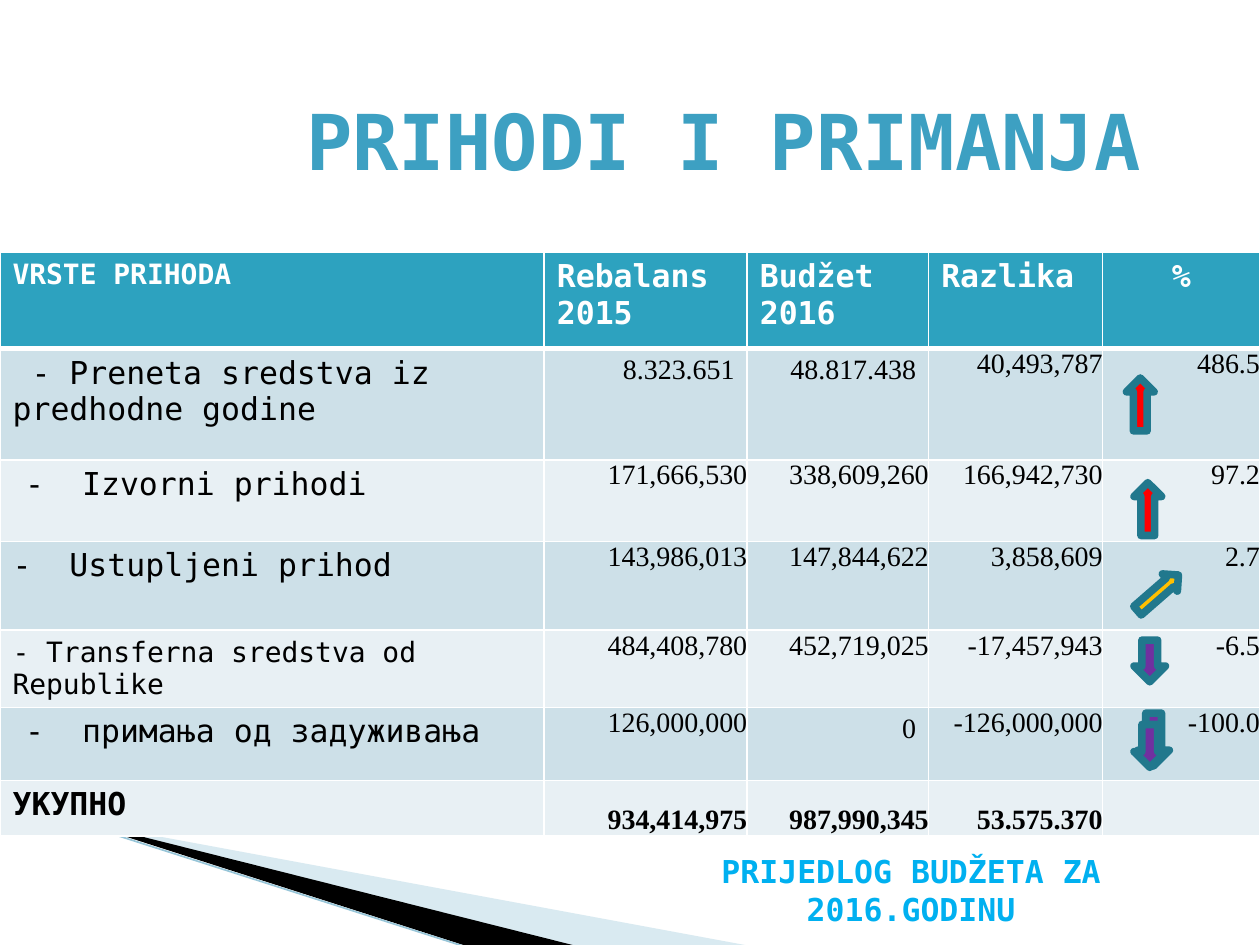
from dataclasses import dataclass

from lxml.etree import SubElement
from pptx import Presentation
from pptx.dml.color import RGBColor
from pptx.enum.shapes import MSO_CONNECTOR, MSO_SHAPE
from pptx.enum.text import MSO_ANCHOR as Anchor, MSO_AUTO_SIZE, PP_ALIGN as Align
from pptx.oxml.ns import qn
from pptx.util import Pt

MONO, SERIF = "DejaVu Sans Mono", "Times New Roman"
WHITE, BLACK, TEAL = "FFFFFF", "000000", "2DA2BF"
BANDS = ("CDE0E8", "E8F0F4")
RED, AMBER, PURPLE, ARROW_EDGE = "FF0000", "FFC000", "7030A0", "21788D"
CELL_INSET = (7.2, 3.6)
DASH_GAP = 32.5

COLUMN_WIDTHS = (311, 116, 103.7, 99.4, 89.9)
ROW_HEIGHTS = (55.2, 63.6, 46.6, 50.7, 42, 41.8, 31.7)
HEADERS = ("VRSTE PRIHODA", "Rebalans 2015", "Budžet 2016", "Razlika", "%")


@dataclass
class RevenueRow:
    label: str
    values: tuple
    left: float = 0
    indent: float = 0
    size: float = 18
    padded: tuple = ()
    total: bool = False


@dataclass
class Arrow:
    left: float
    top: float
    width: float
    height: float
    color: str
    rotation: float = 0


REVENUES = (
    RevenueRow("- Preneta sredstva iz predhodne godine",
               ("8.323.651", "48.817.438", "40,493,787", "486.5"),
               indent=10.8, padded=(1, 2)),
    RevenueRow("-\tIzvorni prihodi",
               ("171,666,530", "338,609,260", "166,942,730", "97.2"),
               left=7.2 + DASH_GAP, indent=-DASH_GAP),
    RevenueRow("-\tUstupljeni prihod",
               ("143,986,013", "147,844,622", "3,858,609", "2.7"),
               left=DASH_GAP, indent=-DASH_GAP),
    RevenueRow("- Transferna sredstva od Republike",
               ("484,408,780", "452,719,025", "-17,457,943", "-6.5"), size=16),
    RevenueRow("-\tпримања од задуживања",
               ("126,000,000", "0", "-126,000,000", "-100.0"),
               left=7.2 + DASH_GAP, indent=-DASH_GAP, padded=(2,)),
    RevenueRow("УКУПНО", ("934,414,975", "987,990,345", "53.575.370", ""), total=True),
)

ARROWS = (
    Arrow(643.7, 216, 15.8, 30.2, RED),
    Arrow(655.2, 323.3, 13, 31, AMBER, 49),
    Arrow(650.2, 407.5, 18, 30.2, PURPLE, 180),
    Arrow(648, 414, 18, 24.5, PURPLE, 180),
    Arrow(648, 365.8, 18, 23.8, PURPLE, 180),
    Arrow(648, 275.8, 15.8, 30.2, RED),
)


def rgb(color: str) -> RGBColor:
    return RGBColor.from_string(color)


def format_text(paragraph, font: str, size: float, color: str, bold: bool = False,
                align=Align.LEFT) -> None:
    paragraph.alignment = align
    for run in paragraph.runs:
        run.font.name = font
        run.font.size = Pt(size)
        run.font.bold = bold
        run.font.color.rgb = rgb(color)


def set_indent(paragraph, left: float, first_line: float) -> None:
    properties = paragraph._p.get_or_add_pPr()
    properties.set("marL", str(Pt(left)))
    properties.set("indent", str(Pt(first_line)))


def add_wedge(slide, points: tuple, color: str, opacity: int = 100) -> None:
    start, *others = [(Pt(x), Pt(y)) for x, y in points]
    builder = slide.shapes.build_freeform(*start)
    builder.add_line_segments(others, close=True)
    shape = builder.convert_to_shape()
    shape.shadow.inherit = False
    shape.fill.solid()
    shape.fill.fore_color.rgb = rgb(color)
    shape.line.fill.background()
    if opacity < 100:
        color_element = shape._element.spPr.find(".//" + qn("a:srgbClr"))
        SubElement(color_element, qn("a:alpha"), val=str(opacity * 1000))


def add_corner(slide) -> None:
    add_wedge(slide, ((39.6, 468.5), (428.4, 540.5), (328.3, 540.5)), "A0CBDC", 40)
    add_wedge(slide, ((38.2, 467.3), (329, 540.5), (267.8, 541)), BLACK)
    line = slide.shapes.add_connector(MSO_CONNECTOR.STRAIGHT, Pt(-0.7), Pt(455.8),
                                      Pt(267.1), Pt(541.4))
    line.line.color.rgb = rgb("97C5D8")
    line.line.width = Pt(0.95)
    SubElement(line._element.spPr, qn("a:effectLst"))


def style_cell(cell, fill: str, bottom: float = 1, inset: tuple = CELL_INSET) -> None:
    """Borders go in before the fill, as the schema orders them."""
    properties = cell._tc.get_or_add_tcPr()
    for side, width in (("lnL", 1), ("lnR", 1), ("lnT", 1), ("lnB", bottom)):
        border = SubElement(properties, qn("a:" + side), w=str(Pt(width)))
        solid = SubElement(border, qn("a:solidFill"))
        SubElement(solid, qn("a:srgbClr"), val=WHITE)
    cell.fill.solid()
    cell.fill.fore_color.rgb = rgb(fill)
    cell.margin_left = cell.margin_right = Pt(inset[0])
    cell.margin_top = cell.margin_bottom = Pt(inset[1])


def add_revenue_table(slide) -> None:
    frame = slide.shapes.add_table(len(ROW_HEIGHTS), len(COLUMN_WIDTHS), Pt(0), Pt(144),
                                   Pt(sum(COLUMN_WIDTHS)), Pt(sum(ROW_HEIGHTS)))
    table = frame.table
    table.first_row = table.horz_banding = False
    for column, width in zip(table.columns, COLUMN_WIDTHS):
        column.width = Pt(width)
    for row, height in zip(table.rows, ROW_HEIGHTS):
        row.height = Pt(height)

    for index, header in enumerate(HEADERS):
        cell = table.cell(0, index)
        cell.text = header
        style_cell(cell, TEAL, bottom=3)
        format_text(cell.text_frame.paragraphs[0], MONO, 18 if index else 16, WHITE, True,
                    Align.CENTER if header == "%" else Align.LEFT)

    for row_index, revenue in enumerate(REVENUES, start=1):
        band = BANDS[(row_index - 1) % 2]
        label = table.cell(row_index, 0)
        label.text = revenue.label
        style_cell(label, band)
        paragraph = label.text_frame.paragraphs[0]
        set_indent(paragraph, revenue.left, revenue.indent)
        format_text(paragraph, MONO, revenue.size, BLACK, revenue.total)
        for column_index, value in enumerate(revenue.values, start=1):
            cell = table.cell(row_index, column_index)
            cell.text = value
            style_cell(cell, band,
                       inset=CELL_INSET if column_index in revenue.padded else (0, 0))
            if revenue.total:
                cell.vertical_anchor = Anchor.BOTTOM
            format_text(cell.text_frame.paragraphs[0], SERIF, 16, BLACK, revenue.total,
                        Align.RIGHT)


def add_arrow(slide, arrow: Arrow) -> None:
    shape = slide.shapes.add_shape(MSO_SHAPE.UP_ARROW, Pt(arrow.left), Pt(arrow.top),
                                   Pt(arrow.width), Pt(arrow.height))
    shape.rotation = arrow.rotation
    shape.shadow.inherit = False
    shape.fill.solid()
    shape.fill.fore_color.rgb = rgb(arrow.color)
    shape.line.color.rgb = rgb(ARROW_EDGE)
    shape.line.width = Pt(4.33)


def fill_title(title) -> None:
    title.left, title.top, title.width, title.height = Pt(167.8), Pt(48.2), Pt(516.2), Pt(63.4)
    frame = title.text_frame
    frame.text = "PRIHODI I PRIMANJA"
    frame.auto_size = MSO_AUTO_SIZE.NONE
    frame.vertical_anchor = Anchor.MIDDLE
    format_text(frame.paragraphs[0], MONO, 44, "3DA0C2", True)


def add_footer(slide) -> None:
    frame = slide.shapes.add_textbox(Pt(344.9), Pt(504.7), Pt(351.4), Pt(28.8)).text_frame
    frame.word_wrap = True
    frame.vertical_anchor = Anchor.BOTTOM
    frame.text = "PRIJEDLOG BUDŽETA ZA 2016.GODINU"
    format_text(frame.paragraphs[0], MONO, 18, "00B0F0", True, Align.CENTER)


def main() -> None:
    presentation = Presentation()
    presentation.slide_width, presentation.slide_height = Pt(720), Pt(540)
    slide = presentation.slides.add_slide(presentation.slide_layouts[5])
    fill_title(slide.shapes.title)
    add_corner(slide)
    add_revenue_table(slide)
    for arrow in ARROWS:
        add_arrow(slide, arrow)
    add_footer(slide)
    presentation.save("out.pptx")


if __name__ == "__main__":
    main()
